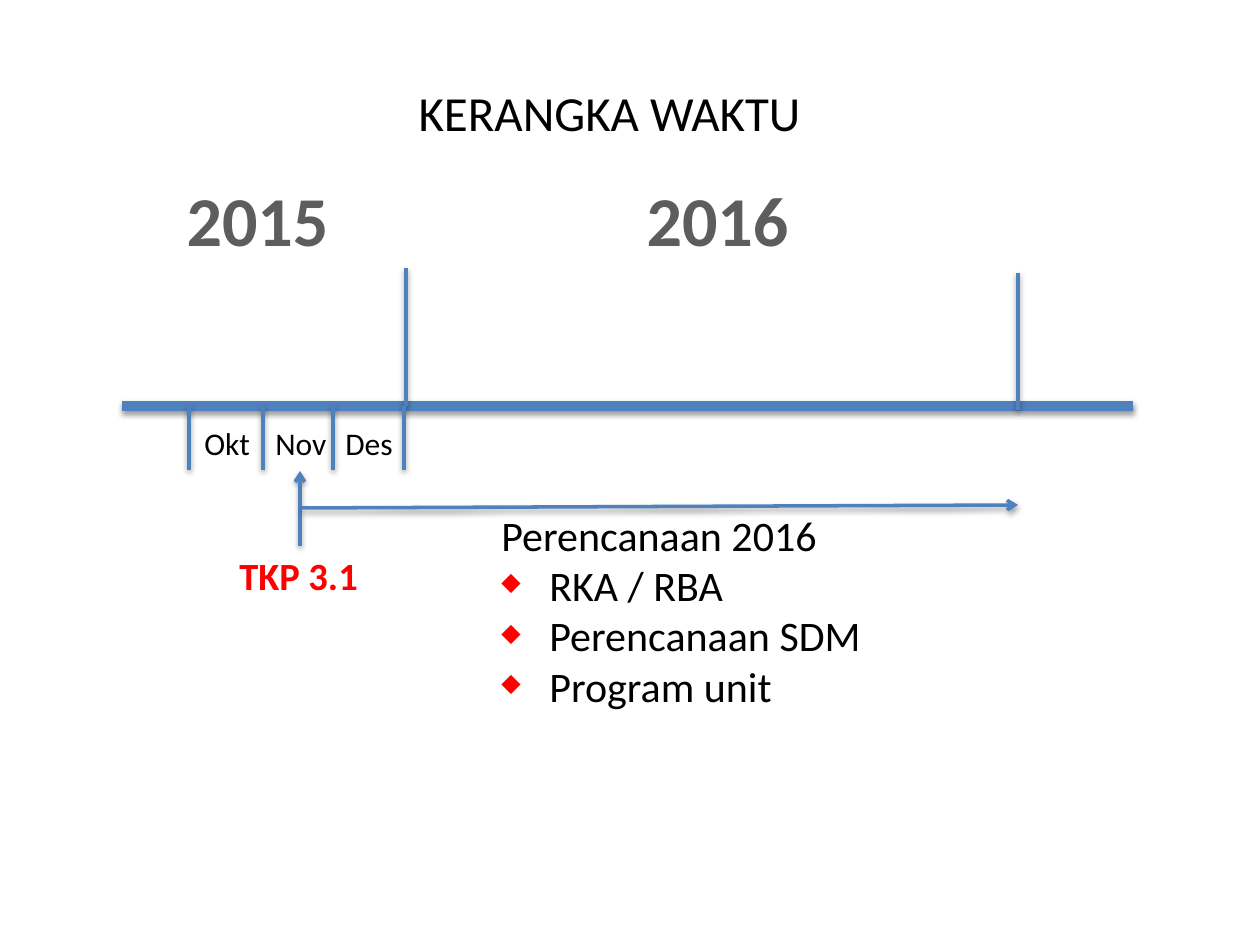
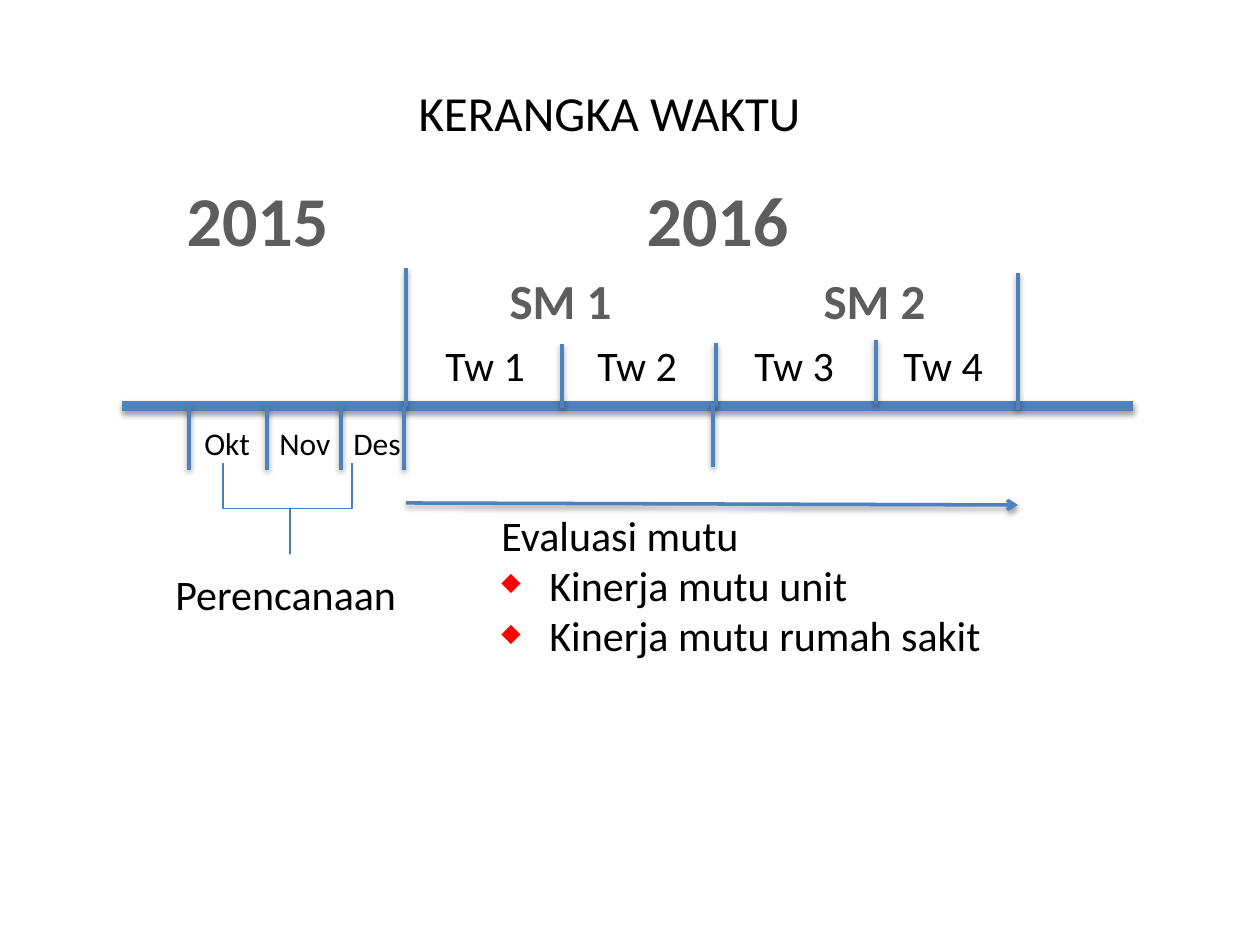
"""Build two timeline slides: planning for 2016 and quality evaluation during 2016."""
from dataclasses import dataclass

from lxml.etree import SubElement
from pptx import Presentation
from pptx.dml.color import RGBColor
from pptx.enum.shapes import MSO_CONNECTOR, MSO_SHAPE
from pptx.enum.text import MSO_ANCHOR, MSO_AUTO_SIZE, PP_ALIGN
from pptx.oxml.ns import qn
from pptx.util import Emu, Pt

COLORS = {
    "line": "4F81BD",
    "brace": "4B7EBC",
    "heading": "5D5D5D",
    "text": "000000",
    "accent": "FF0000",
    "shadow": "000000",
}
FONT = "Calibri"
EMU_PER_PX = 914400 / 126
AXIS_Y = 406
YEAR_START, YEAR_END = 406, 1018
TICK_LENGTH = 64
BULLET_INDENT = 48


@dataclass(frozen=True)
class Label:
    text: str
    left: int
    top: int
    width: int
    height: int
    size: int
    color: str = "text"
    bold: bool = False
    centered: bool = False


@dataclass(frozen=True)
class Segment:
    x1: int
    y1: int
    x2: int
    y2: int
    weight: int = 2
    arrow: bool = False


@dataclass(frozen=True)
class BulletList:
    heading: str
    items: tuple[str, ...]
    width: int
    height: int


def px(value: int) -> Emu:
    return Emu(round(value * EMU_PER_PX))


def color(name: str) -> RGBColor:
    return RGBColor.from_string(COLORS[name])


def heading(text: str, left: int, top: int, width: int, height: int, size: int) -> Label:
    return Label(text, left, top, width, height, size, "heading", True, True)


def tick(x: int, top: int, length: int = TICK_LENGTH) -> Segment:
    return Segment(x, top, x, top + length)


def format_paragraph(paragraph, size: int, color_name: str = "text", bold: bool = False) -> None:
    font = paragraph.font
    font.name = FONT
    font.size = Pt(size)
    font.bold = bold
    font.color.rgb = color(color_name)


def fill_label(shape, label: Label) -> None:
    shape.left, shape.top = px(label.left), px(label.top)
    shape.width, shape.height = px(label.width), px(label.height)
    frame = shape.text_frame
    frame.text = label.text
    frame.word_wrap = False
    frame.auto_size = MSO_AUTO_SIZE.NONE
    frame.vertical_anchor = MSO_ANCHOR.TOP
    paragraph = frame.paragraphs[0]
    paragraph.alignment = PP_ALIGN.CENTER if label.centered else PP_ALIGN.LEFT
    format_paragraph(paragraph, label.size, label.color, label.bold)


def add_label(slide, label: Label):
    shape = slide.shapes.add_textbox(0, 0, 0, 0)
    fill_label(shape, label)
    return shape


def add_shadow(connector) -> None:
    effects = SubElement(connector._element.spPr, qn("a:effectLst"))
    shadow = SubElement(effects, qn("a:outerShdw"), blurRad=str(Pt(3.1)),
                        dist=str(Pt(1.6)), dir="5400000", rotWithShape="0")
    shadow_color = SubElement(shadow, qn("a:srgbClr"), val=COLORS["shadow"])
    SubElement(shadow_color, qn("a:alpha"), val="38000")


def add_segment(slide, segment: Segment):
    connector = slide.shapes.add_connector(
        MSO_CONNECTOR.STRAIGHT, px(segment.x1), px(segment.y1), px(segment.x2), px(segment.y2))
    connector.line.color.rgb = color("line")
    connector.line.width = Pt(segment.weight)
    if segment.arrow:
        SubElement(connector.line._get_or_add_ln(), qn("a:tailEnd"), type="arrow")
    add_shadow(connector)
    return connector


def add_bullet(paragraph) -> None:
    properties = paragraph._p.get_or_add_pPr()
    indent = px(BULLET_INDENT)
    properties.set("marL", str(indent))
    properties.set("indent", str(-indent))
    bullet_color = SubElement(properties, qn("a:buClr"))
    SubElement(bullet_color, qn("a:srgbClr"), val=COLORS["accent"])
    SubElement(properties, qn("a:buSzPct"), val="60000")
    SubElement(properties, qn("a:buChar"), char="◆")


def add_bullet_list(slide, content: BulletList) -> None:
    shape = slide.shapes.add_textbox(px(489), px(503), px(content.width), px(content.height))
    frame = shape.text_frame
    frame.word_wrap = True
    frame.text = "\n".join((content.heading, *content.items))
    for index, paragraph in enumerate(frame.paragraphs):
        if index:
            add_bullet(paragraph)
        format_paragraph(paragraph, 24)


def add_timeline(presentation, november: int, december: int, december_tick: int):
    slide = presentation.slides.add_slide(presentation.slide_layouts[5])
    fill_label(slide.shapes.title, Label("KERANGKA WAKTU", 406, 76, 412, 72, 28))
    add_segment(slide, Segment(122, AXIS_Y, 1133, AXIS_Y, weight=6))
    add_segment(slide, tick(YEAR_START, 268, 138))
    add_segment(slide, tick(YEAR_END, 273, 137))
    for year, left in (("2015", 173), ("2016", 633)):
        add_label(slide, heading(year, left, 170, 169, 97, 40))
    for x in (189, november, december_tick, 404):
        add_segment(slide, tick(x, AXIS_Y))
    for month, left, width in (("Okt", 192, 72), ("Nov", november, 77), ("Des", december, 73)):
        add_label(slide, Label(month, left, 418, width, 50, 18))
    return slide


def build_planning(presentation) -> None:
    slide = add_timeline(presentation, 263, 333, 333)
    milestone = add_label(slide, Label("TKP 3.1", 227, 546, 146, 59, 22, "accent", True))
    milestone_arrow = add_segment(slide, Segment(300, 546, 300, 471, arrow=True))
    milestone_arrow.begin_connect(milestone, 0)
    add_segment(slide, Segment(302, 508, YEAR_END, 505, arrow=True))
    add_bullet_list(slide, BulletList(
        "Perencanaan 2016", ("RKA / RBA", "Perencanaan SDM", "Program unit"), 478, 217))


def add_planning_brace(slide) -> None:
    brace = slide.shapes.add_shape(MSO_SHAPE.RIGHT_BRACE, px(242), px(444), px(91), px(129))
    brace.rotation = 90
    brace.adjustments[0] = 0
    brace.adjustments[1] = 0.48
    brace.fill.background()
    brace.line.color.rgb = color("brace")
    brace.line.width = Pt(0.75)
    brace.shadow.inherit = False


def build_evaluation(presentation) -> None:
    slide = add_timeline(presentation, 267, 341, 341)
    for semester, left in (("SM 1", 496), ("SM 2", 810)):
        add_label(slide, heading(semester, left, 264, 129, 72, 28))
    for x, top in ((562, 344), (716, 343), (876, 340), (713, 403)):
        add_segment(slide, tick(x, top))
    for quarter, left in enumerate((433, 585, 742, 891), start=1):
        add_label(slide, Label(f"Tw {quarter}", left, 333, 107, 63, 24))
    add_planning_brace(slide)
    add_label(slide, Label("Perencanaan", 163, 562, 248, 63, 24))
    add_segment(slide, Segment(YEAR_START, 503, YEAR_END, 505, arrow=True))
    add_bullet_list(slide, BulletList(
        "Evaluasi mutu", ("Kinerja mutu unit", "Kinerja mutu rumah sakit"), 558, 165))


def main() -> None:
    presentation = Presentation()
    presentation.slide_width, presentation.slide_height = px(1260), px(945)
    build_planning(presentation)
    build_evaluation(presentation)
    presentation.save("out.pptx")


if __name__ == "__main__":
    main()
